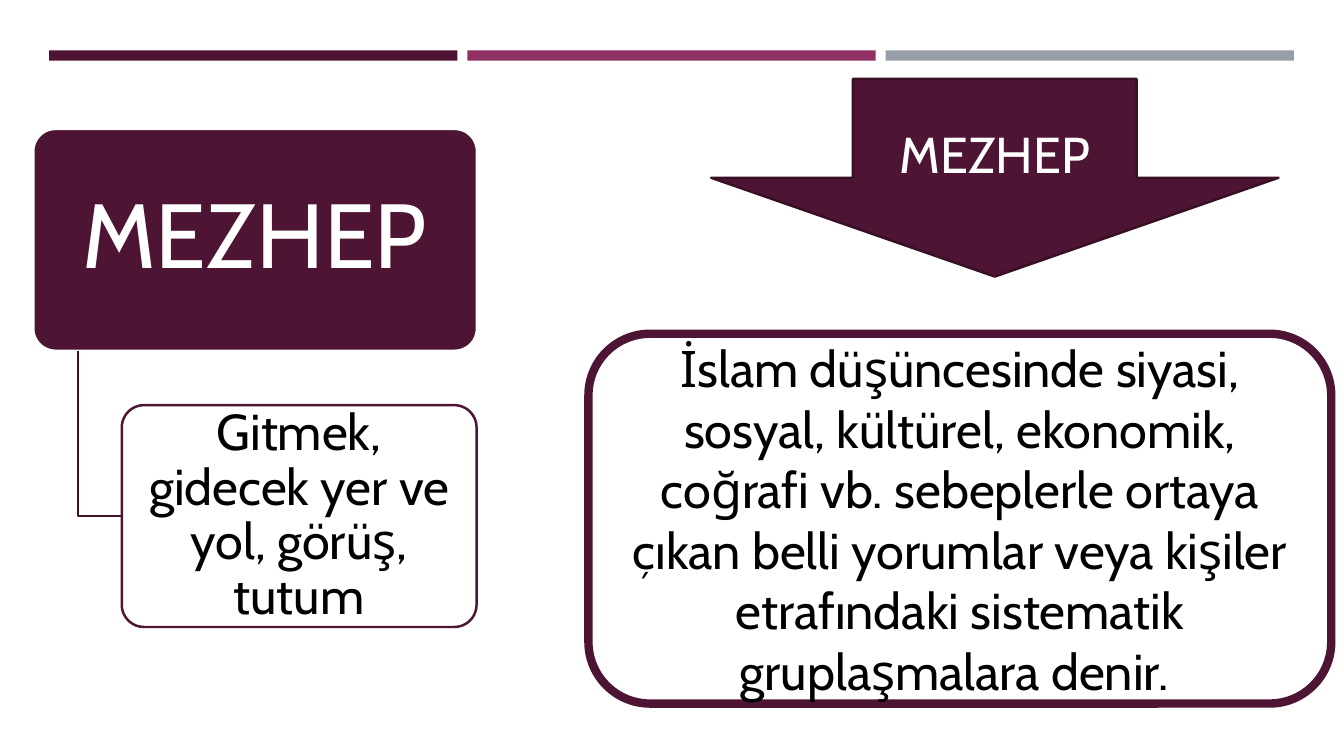
from dataclasses import dataclass

import pptx
import pptx.dml.color
import pptx.enum.shapes
import pptx.enum.text
import pptx.util
from pptx.dml.color import RGBColor
from pptx.enum.shapes import MSO_SHAPE
from pptx.util import Cm

PLUM = RGBColor(0x4D, 0x14, 0x34)
DARK_PLUM = RGBColor(0x39, 0x0F, 0x26)
ELBOW_PLUM = RGBColor(0x3E, 0x10, 0x2A)
MAGENTA = RGBColor(0x90, 0x31, 0x63)
GREY = RGBColor(0x96, 0x9F, 0xA7)
WHITE = RGBColor(0xFF, 0xFF, 0xFF)
BLACK = RGBColor(0x00, 0x00, 0x00)
FONT = "Cabin"


@dataclass
class Label:
    words: str
    color: RGBColor
    size: float = 36
    spacing: float = 1.0
    inset_x: float = 0.25
    inset_y: float = 0.13


@dataclass
class Panel:
    kind: MSO_SHAPE
    left: float
    top: float
    width: float
    height: float
    fill: RGBColor
    line: RGBColor | None = None
    line_width: float = 1.75
    corner: float | None = None
    label: Label | None = None


def write_label(shape, label: Label) -> None:
    frame = shape.text_frame
    frame.word_wrap = True
    frame.auto_size = pptx.enum.text.MSO_AUTO_SIZE.NONE
    frame.vertical_anchor = pptx.enum.text.MSO_ANCHOR.MIDDLE
    frame.margin_left = frame.margin_right = Cm(label.inset_x)
    frame.margin_top = frame.margin_bottom = Cm(label.inset_y)
    para = frame.paragraphs[0]
    para.alignment = pptx.enum.text.PP_ALIGN.CENTER
    para.line_spacing = label.spacing
    span = para.add_run()
    span.text = label.words
    span.font.name = FONT
    span.font.size = pptx.util.Pt(label.size)
    span.font.color.rgb = label.color


def draw_panel(page, panel: Panel) -> None:
    box = page.shapes.add_shape(
        panel.kind, Cm(panel.left), Cm(panel.top), Cm(panel.width), Cm(panel.height)
    )
    box.shadow.inherit = False
    box.fill.solid()
    box.fill.fore_color.rgb = panel.fill
    if panel.line is None:
        box.line.fill.background()
    else:
        box.line.color.rgb = panel.line
        box.line.width = pptx.util.Pt(panel.line_width)
    if panel.corner is not None:
        box.adjustments[0] = panel.corner
    if panel.label is not None:
        write_label(box, panel.label)


def draw_elbow(page, points: list[tuple[float, float]]) -> None:
    corners = [(Cm(x), Cm(y)) for x, y in points]
    builder = page.shapes.build_freeform(*corners[0])
    builder.add_line_segments(corners[1:], close=False)
    elbow = builder.convert_to_shape()
    elbow.shadow.inherit = False
    elbow.fill.background()
    elbow.line.color.rgb = ELBOW_PLUM
    elbow.line.width = pptx.util.Pt(1.75)


def place_title(page) -> None:
    title = page.shapes.title
    title.left, title.top = Cm(0.99), Cm(3.4)
    title.width, title.height = Cm(10.85), Cm(5.26)
    write_label(title, Label("MEZHEP", WHITE, 65, 0.9, 0.36, 0.23))
    # Bring the title in front of its panel
    title.element.getparent().append(title.element)


BARS = [
    Panel(MSO_SHAPE.RECTANGLE, 1.24 + 10.54 * column, 1.27, 10.29, 0.26, color)
    for column, color in enumerate((PLUM, MAGENTA, GREY))
]
ARROW = Panel(
    MSO_SHAPE.DOWN_ARROW, 17.92, 1.99, 14.3, 4.98, PLUM, DARK_PLUM,
    label=Label("MEZHEP", WHITE),
)
DEFINITION = Panel(
    MSO_SHAPE.ROUNDED_RECTANGLE, 14.83, 8.41, 18.72, 9.32, WHITE, PLUM, 6,
    label=Label(
        "İslam düşüncesinde siyasi, sosyal, kültürel, ekonomik, coğrafi vb. "
        "sebeplerle ortaya çıkan belli yorumlar veya kişiler etrafındaki "
        "sistematik gruplaşmalara denir. ",
        BLACK,
    ),
)
TERM = Panel(
    MSO_SHAPE.ROUNDED_RECTANGLE, 0.84, 3.25, 11.18, 5.59, PLUM, WHITE, corner=0.1
)
MEANING = Panel(
    MSO_SHAPE.ROUNDED_RECTANGLE, 3.07, 10.21, 8.94, 5.59, WHITE, PLUM, corner=0.1,
    label=Label(
        "Gitmek, gidecek yer ve yol, görüş, tutum", BLACK, 36, 0.9, 0.18, 0.13
    ),
)


def main() -> None:
    deck = pptx.Presentation()
    deck.slide_width, deck.slide_height = Cm(33.87), Cm(19.05)
    page = deck.slides.add_slide(deck.slide_layouts.get_by_name("Title Only"))

    # Top bars, then the definition on the right
    for panel in [*BARS, ARROW, DEFINITION]:
        draw_panel(page, panel)

    # Term and its literal meaning on the left
    draw_panel(page, TERM)
    draw_elbow(page, [(1.96, 8.84), (1.96, 13.0), (3.07, 13.0)])
    draw_panel(page, MEANING)
    place_title(page)

    deck.save("out.pptx")


if __name__ == "__main__":
    main()
